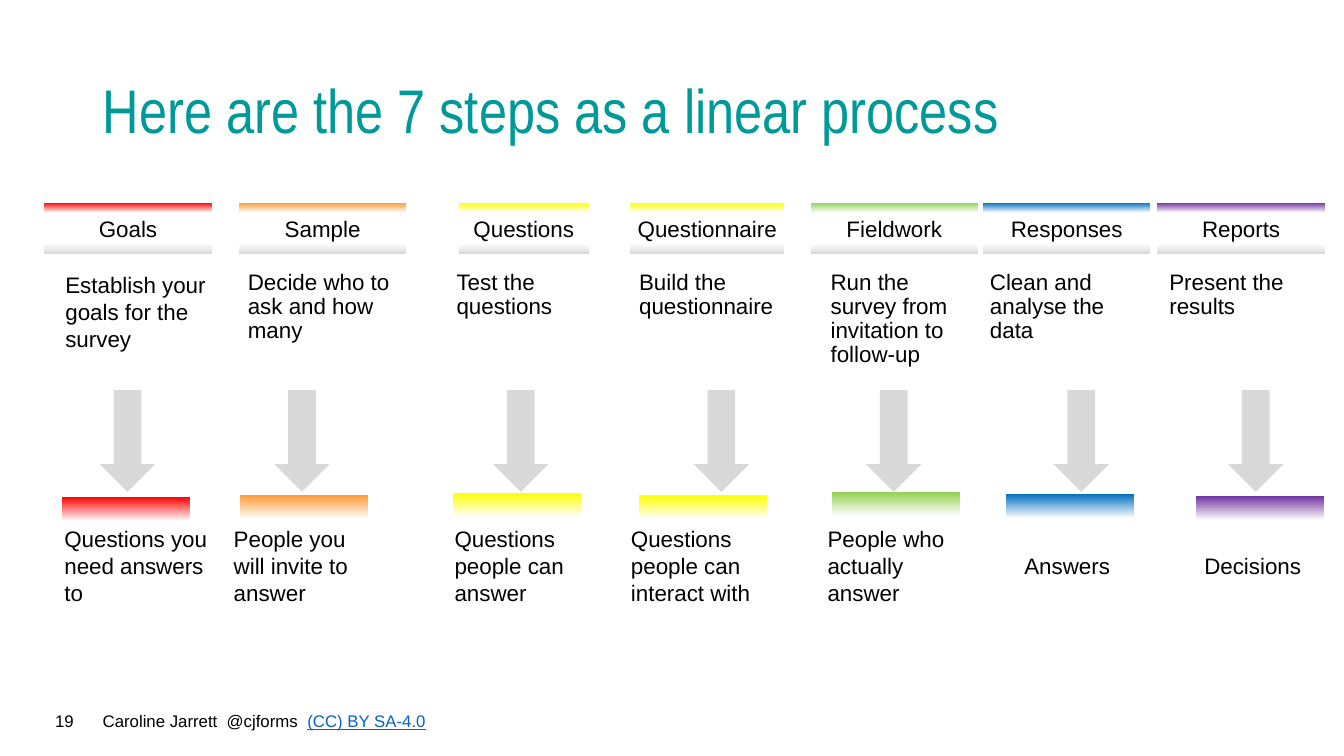
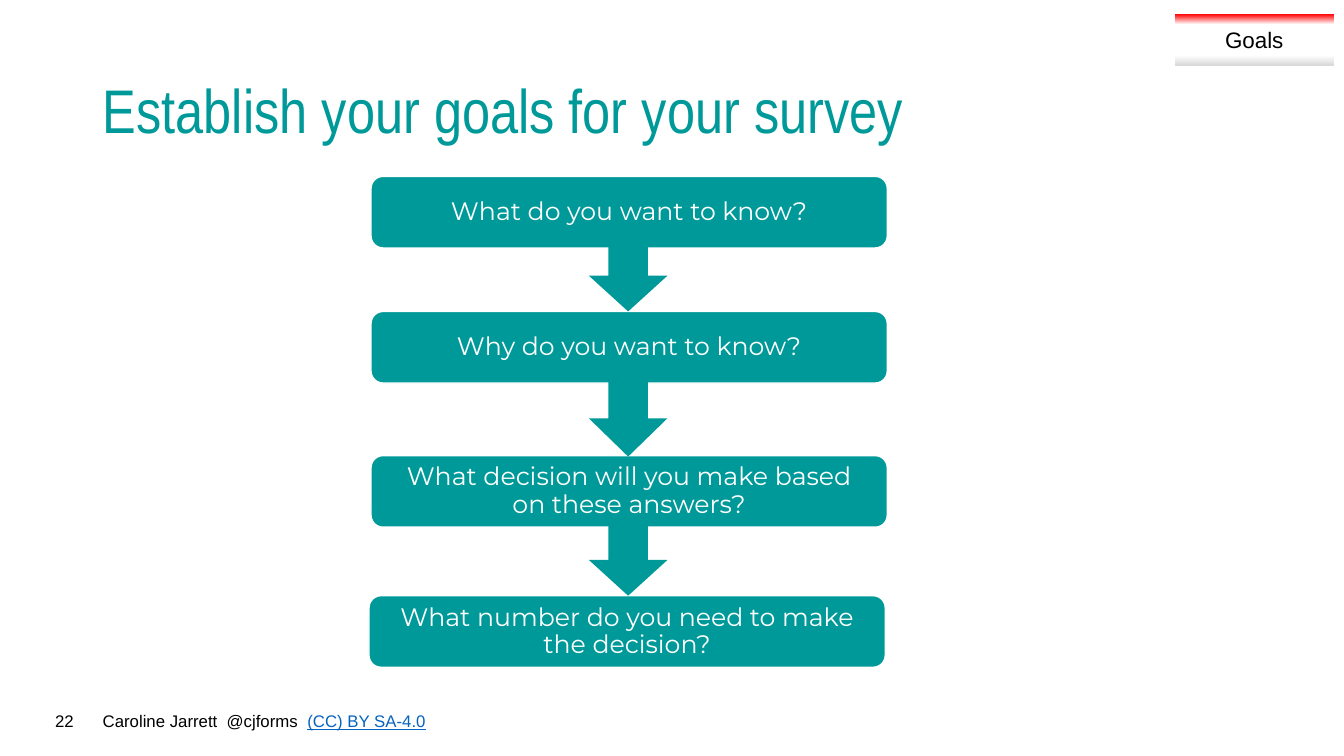
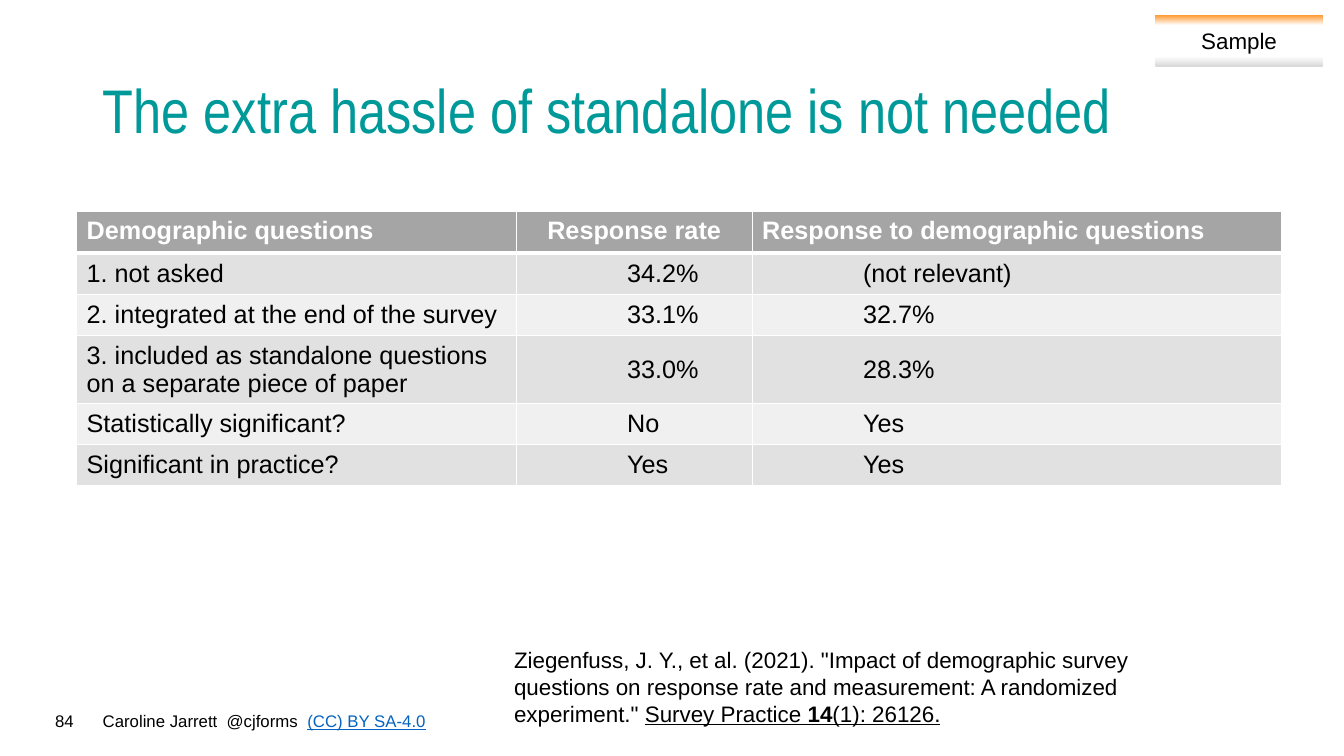
from lxml import etree
from pptx import Presentation
from pptx.dml.color import RGBColor
from pptx.enum import shapes, text
from pptx.oxml import ns
from pptx.util import Inches, Pt

TEAL, BLACK, WHITE, SILVER = "009999", "000000", "FFFFFF", "D9D9D9"
RED, ORANGE, YELLOW = "FF0000", "FF9933", "FFFF00"
GREEN, BLUE, PURPLE, LINK = "92D050", "0070C0", "7030A0", "0563C1"
LEFT, CENTER, RIGHT = text.PP_ALIGN.LEFT, text.PP_ALIGN.CENTER, text.PP_ALIGN.RIGHT
TOP, MIDDLE = text.MSO_ANCHOR.TOP, text.MSO_ANCHOR.MIDDLE
RECTANGLE = shapes.MSO_SHAPE.RECTANGLE
ROUNDED = shapes.MSO_SHAPE.ROUNDED_RECTANGLE
ARROW = shapes.MSO_SHAPE.DOWN_ARROW


def rgb(value):
    return RGBColor.from_string(value)


def inches(place):
    return [Inches(length) for length in place]


class Slides:
    font = "Arial"
    title_font = "Arial Narrow"
    box_font = "Montserrat"

    def __init__(self):
        self.deck = Presentation()
        self.deck.slide_width, self.deck.slide_height = Inches(13.33), Inches(7.5)
        self.page = None

    def start(self, title, number):
        self.page = self.deck.slides.add_slide(self.deck.slide_layouts[5])
        box = self.page.shapes.title
        box.left, box.top, box.width, box.height = inches((0.92, 0.4, 11.5, 1.45))
        self.put_text(box.text_frame, [(title, {})], 44, TEAL, self.title_font,
                      anchor=MIDDLE, spacing=0.9)
        self.label((0.92, 7, 5.71, 0.3), [
            ("Caroline Jarrett  @cjforms  ", {}),
            ("(CC) BY SA-4.0", {"color": LINK, "underline": True})], 12)
        self.label((0.13, 7, 0.7, 0.3), [(number, {})], 12, align=RIGHT)

    def put_text(self, frame, spans, size=16, color=BLACK, font=None,
                 align=LEFT, anchor=TOP, spacing=1.0):
        frame.word_wrap = True
        frame.auto_size = text.MSO_AUTO_SIZE.NONE
        frame.vertical_anchor = anchor
        para = frame.paragraphs[0]
        para.alignment, para.line_spacing = align, spacing
        for words, look in spans:
            span = para.add_run()
            span.text = words
            span.font.name, span.font.size = font or self.font, Pt(size)
            span.font.color.rgb = rgb(look.get("color", color))
            span.font.bold = look.get("bold", False)
            span.font.underline = look.get("underline", False)

    def label(self, place, spans, size=16, **layout):
        box = self.page.shapes.add_textbox(*inches(place))
        self.put_text(box.text_frame, spans, size, **layout)

    def shape(self, kind, place, fill=None, line=None):
        shape = self.page.shapes.add_shape(kind, *inches(place))
        shape.shadow.inherit = False
        if fill:
            shape.fill.solid()
            shape.fill.fore_color.rgb = rgb(fill)
        if line:
            shape.line.color.rgb = rgb(line)
            shape.line.width = Pt(1)
        else:
            shape.line.fill.background()
        return shape

    def fade(self, place, stops):
        shape = self.shape(RECTANGLE, place)
        shape.fill.gradient()
        shape.fill.gradient_angle = 270
        stop_list = shape.element.spPr.find(".//" + ns.qn("a:gsLst"))
        for stop in list(stop_list):
            stop_list.remove(stop)
        for percent, color in stops:
            stop = etree.SubElement(stop_list, ns.qn("a:gs"), pos=str(percent * 1000))
            etree.SubElement(stop, ns.qn("a:srgbClr"), val=color)
        return shape

    def bar(self, place, color):
        self.fade(place, [(0, color), (20, WHITE), (100, WHITE)])

    def plate(self, name, color, left, top, width=1.66):
        shape = self.fade((left, top, width, 0.51),
                          [(0, color), (20, WHITE), (80, WHITE), (100, SILVER)])
        frame = shape.text_frame
        frame.margin_left = frame.margin_right = 0
        self.put_text(frame, [(name, {})], align=CENTER, anchor=MIDDLE)

    def question(self, words, left, top):
        shape = self.shape(ROUNDED, (left, top, 5.12, 0.71), TEAL, WHITE)
        frame = shape.text_frame
        frame.margin_left = frame.margin_right = Inches(0.17)
        frame.margin_top = frame.margin_bottom = Inches(0.17)
        self.put_text(frame, [(words, {})], 18, WHITE, self.box_font, CENTER, MIDDLE, 0.9)

    def border(self, cell, **widths):
        for side in ("L", "R", "T", "B"):
            line = etree.SubElement(cell._tc.get_or_add_tcPr(), ns.qn("a:ln" + side),
                                    w=str(Pt(widths.get(side, 1))))
            fill = etree.SubElement(line, ns.qn("a:solidFill"))
            etree.SubElement(fill, ns.qn("a:srgbClr"), val=WHITE)

    def table(self, place, widths, heights, rows):
        table = self.page.shapes.add_table(len(rows), len(widths), *inches(place)).table
        for column, width in zip(table.columns, widths):
            column.width = Inches(width)
        for r, (height, row) in enumerate(zip(heights, rows)):
            table.rows[r].height = Inches(height)
            head = r == 0
            for c, words in enumerate(row):
                cell = table.cell(r, c)
                self.border(cell, T=3 if r == 1 else 1, B=3 if head else 1)
                cell.fill.solid()
                cell.fill.fore_color.rgb = rgb(
                    "A5A5A5" if head else "E1E1E1" if r % 2 else "F0F0F0")
                cell.vertical_anchor = TOP if head else MIDDLE
                if c and not head:
                    cell.margin_left = Inches(1.1)
                self.put_text(cell.text_frame, [(words, {"bold": head})], 18,
                              WHITE if head else BLACK,
                              align=CENTER if head and c == 1 else LEFT,
                              anchor=cell.vertical_anchor)


def linear_process(slides):
    slides.start("Here are the 7 steps as a linear process", "19")
    steps = [
        ("Goals", RED, 0.44, 1.66, "Establish your goals for the survey", 0.55, 0.99,
         0.62, 4.93, "Questions you need answers to", 0.54),
        ("Sample", ORANGE, 2.37, 1.66, "Decide who to ask and how many", 2.36, 2.72,
         2.38, 4.91, "People you will invite to answer", 2.22),
        ("Questions", YELLOW, 4.55, 1.29, "Test the questions", 4.43, 4.89,
         4.49, 4.89, "Questions people can answer", 4.41),
        ("Questionnaire", YELLOW, 6.25, 1.53, "Build the questionnaire", 6.24, 6.88,
         6.34, 4.91, "Questions people can interact with", 6.16),
        ("Fieldwork", GREEN, 8.04, 1.66, "Run the survey from invitation to follow-up",
         8.14, 8.59, 8.25, 4.88, "People who actually answer", 8.11),
        ("Responses", BLUE, 9.75, 1.66, "Clean and analyse the data", 9.72, 10.45,
         9.98, 4.9, "Answers", 9.77),
        ("Reports", PURPLE, 11.48, 1.66, "Present the results", 11.5, 12.18,
         11.86, 4.92, "Decisions", 11.61),
    ]
    for (name, color, left, width, task, task_left, arrow_left,
         bar_left, bar_top, result, result_left) in steps:
        slides.bar((bar_left, bar_top, 1.27, 1.2), color)
        slides.shape(ARROW, (arrow_left, 3.87, 0.55, 1.01), SILVER)
        slides.plate(name, color, left, 2.01, width)
        slides.label((task_left, 2.64, 1.88 if name == "Questionnaire" else 1.63, 0.91),
                     [(task, {})], spacing=1.0 if name == "Goals" else 0.9)
        single = " " not in result
        slides.label((result_left, 5.16, 1.63, 0.91), [(result, {})],
                     align=CENTER if single else LEFT, anchor=MIDDLE if single else TOP)


def survey_goals(slides):
    slides.start("Establish your goals for your survey", "22")
    for words, left, top in [
            ("What do you want to know?", 3.68, 1.75),
            ("Why do you want to know?", 3.68, 3.09),
            ("What decision will you make based on these answers?", 3.68, 4.52),
            ("What number do you need to make the decision?", 3.66, 5.91)]:
        slides.question(words, left, top)
    for top, height in [(2.38, 0.71), (3.77, 0.76), (5.2, 0.71)]:
        slides.shape(ARROW, (5.84, top, 0.78, height), TEAL)
    slides.plate("Goals", RED, 11.65, 0.14, 1.58)


def standalone_questions(slides):
    slides.start("The extra hassle of standalone is not needed", "84")
    slides.table((0.76, 2.1, 11.95, 2.72), (4.36, 2.34, 5.25),
                 (0.41, 0.41, 0.41, 0.67, 0.41, 0.41), [
        ("Demographic questions", "Response rate", "Response to demographic questions"),
        ("1. not asked", "34.2%", "(not relevant)"),
        ("2. integrated at the end of the survey", "33.1%", "32.7%"),
        ("3. included as standalone questions on a separate piece of paper",
         "33.0%", "28.3%"),
        ("Statistically significant?", "No", "Yes"),
        ("Significant in practice?", "Yes", "Yes"),
    ])
    slides.label((5, 6.36, 6.67, 0.91), [
        ('Ziegenfuss, J. Y., et al. (2021). "Impact of demographic survey questions on '
         'response rate and measurement: A randomized experiment." ', {}),
        ("Survey Practice ", {"underline": True}),
        ("14", {"underline": True, "bold": True}),
        ("(1): 26126.", {"underline": True})])
    slides.plate("Sample", ORANGE, 11.46, 0.15)


def main():
    slides = Slides()
    linear_process(slides)
    survey_goals(slides)
    standalone_questions(slides)
    slides.deck.save("out.pptx")


if __name__ == "__main__":
    main()
